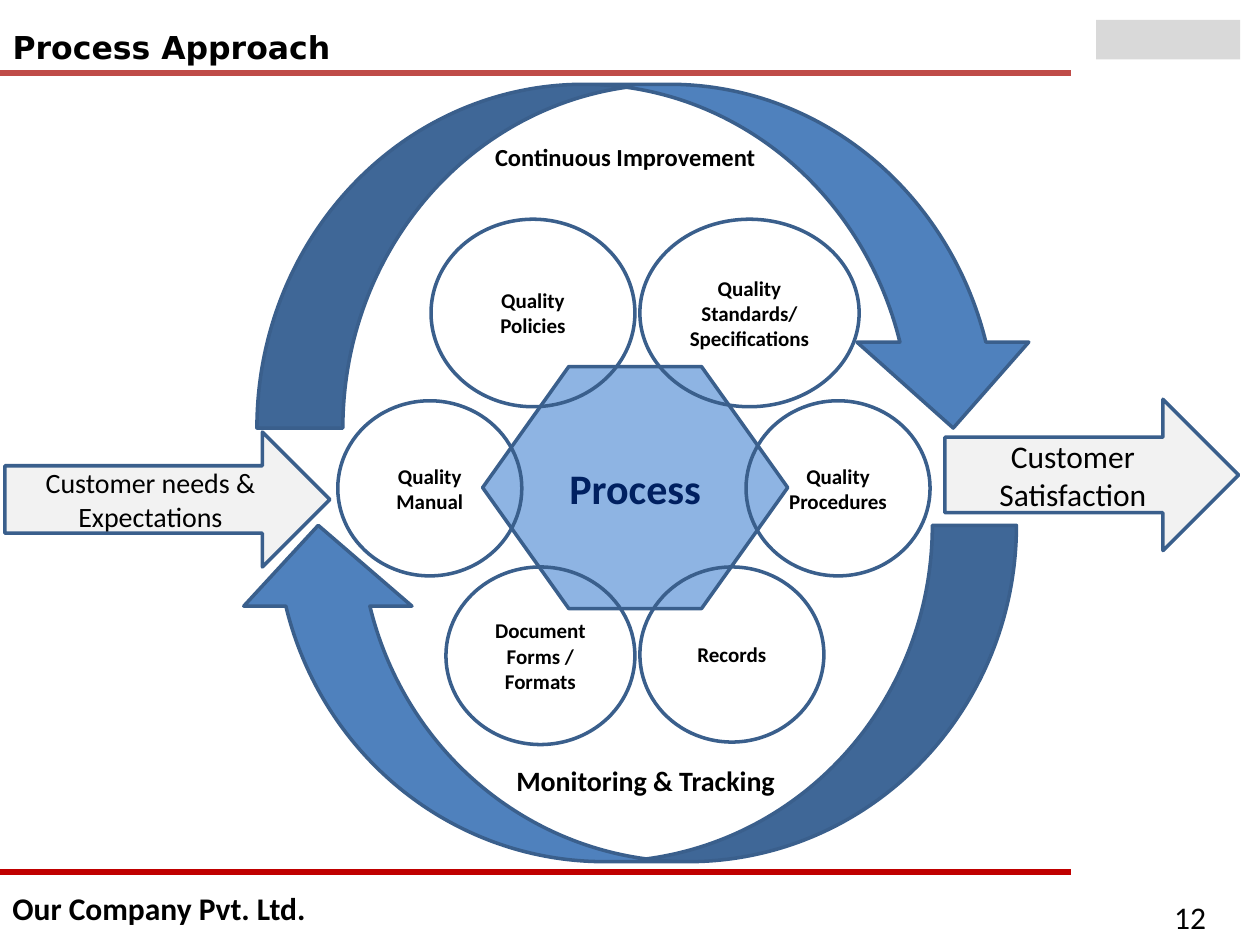
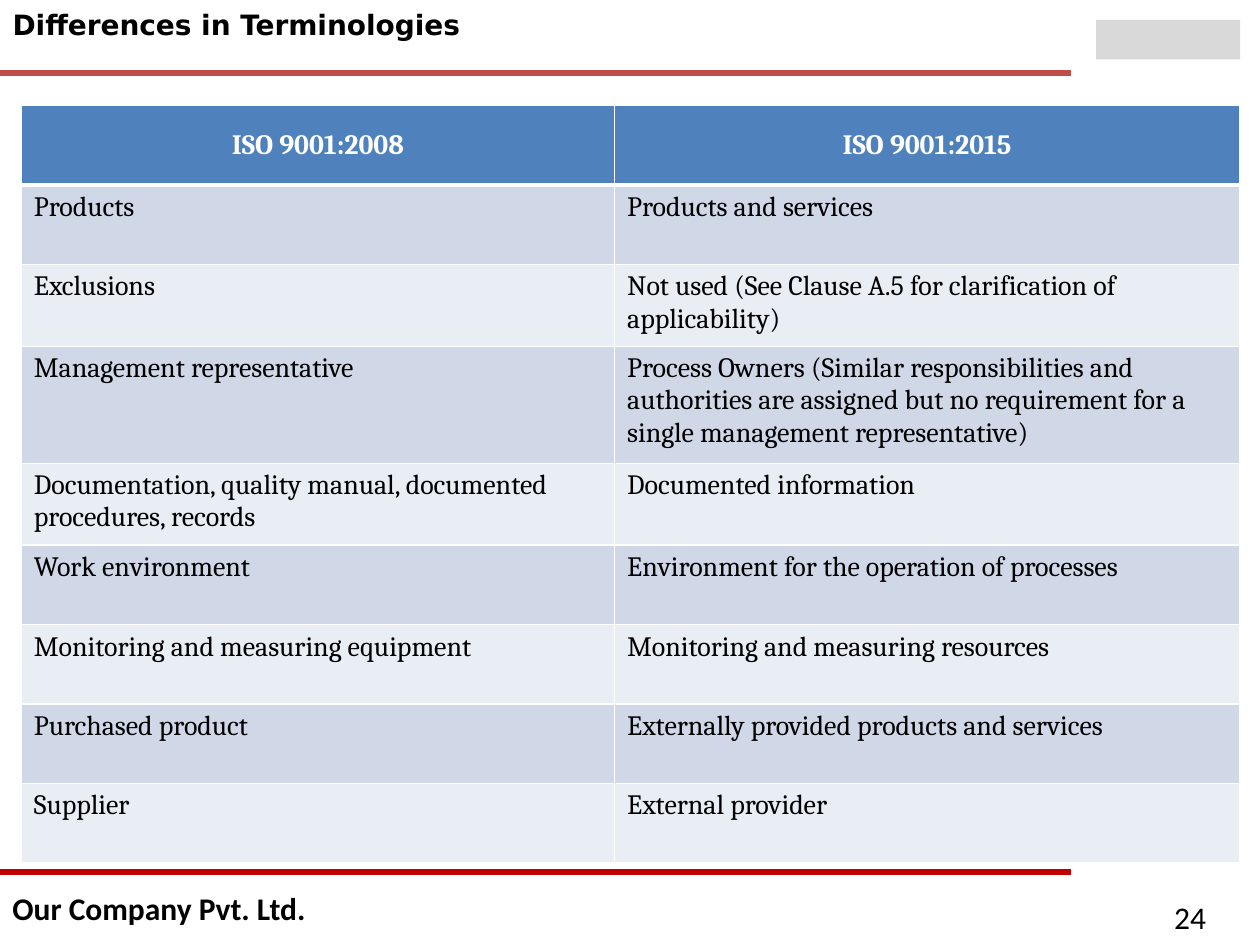
"""Build two quality management slides: a process diagram and a table of terms."""
from dataclasses import dataclass

from lxml.etree import SubElement
from pptx import Presentation
from pptx.dml.color import RGBColor
from pptx.enum.shapes import MSO_CONNECTOR as Link, MSO_SHAPE as Kind
from pptx.enum.text import MSO_ANCHOR as Anchor, MSO_AUTO_SIZE as Fit, PP_ALIGN as Align
from pptx.oxml.ns import qn
from pptx.util import Cm, Pt

BLACK = RGBColor(0x00, 0x00, 0x00)
WHITE = RGBColor(0xFF, 0xFF, 0xFF)
BLUE = RGBColor(0x4F, 0x81, 0xBD)
EDGE = RGBColor(0x3A, 0x5F, 0x8C)
SKY = RGBColor(0x8E, 0xB4, 0xE3)
NAVY = RGBColor(0x00, 0x20, 0x60)
PALE = RGBColor(0xF2, 0xF2, 0xF2)
GREY = RGBColor(0xD9, 0xD9, 0xD9)
BRICK = RGBColor(0xBF, 0x4C, 0x48)
RED = RGBColor(0xC0, 0x00, 0x00)
BANDS = (RGBColor(0xE9, 0xED, 0xF4), RGBColor(0xD0, 0xD8, 0xE8))


@dataclass(frozen=True)
class Box:
    left: float
    top: float
    width: float
    height: float

    def size(self) -> tuple:
        return Cm(self.left), Cm(self.top), Cm(self.width), Cm(self.height)


@dataclass(frozen=True)
class Type:
    size: int
    bold: bool = False
    color: RGBColor = BLACK
    face: str = "Calibri"
    align: Align = Align.LEFT


@dataclass(frozen=True)
class Node:
    kind: Kind
    box: Box
    text: str = ""
    type: Type = Type(12, True, align=Align.CENTER)
    fill: RGBColor | None = None
    adjust: tuple = ()
    turn: int = 0


HEAD = Type(16, True, WHITE, "Cambria", Align.CENTER)
BODY = Type(16, face="Cambria")

NODES = (
    Node(Kind.RIGHT_ARROW, Box(0.1, 8.71, 6.55, 2.72), "Customer needs & Expectations",
         Type(16, align=Align.CENTER), PALE),
    Node(Kind.RIGHT_ARROW, Box(19.05, 8.05, 5.92, 3.05), "Customer Satisfaction",
         Type(18, align=Align.CENTER), PALE),
    Node(Kind.HEXAGON, Box(9.73, 7.39, 6.15, 4.88), "Process",
         Type(24, True, NAVY, align=Align.CENTER), SKY, (0.356, 1.155)),
    Node(Kind.OVAL, Box(8.69, 4.42, 4.11, 3.78), "Quality Policies"),
    Node(Kind.OVAL, Box(12.9, 4.42, 4.42, 3.78), "Quality Standards/\nSpecifications"),
    Node(Kind.OVAL, Box(6.81, 8.08, 3.71, 3.53), "Quality Manual"),
    Node(Kind.OVAL, Box(8.99, 11.43, 3.81, 3.58), "Document\nForms / Formats"),
    Node(Kind.OVAL, Box(12.9, 11.43, 3.71, 3.53), "Records"),
    Node(Kind.OVAL, Box(15.04, 8.08, 3.71, 3.53), "Quality Procedures"),
    Node(Kind.CURVED_DOWN_ARROW, Box(5.18, 1.7, 15.77, 6.93), fill=BLUE),
    Node(Kind.CURVED_DOWN_ARROW, Box(4.72, 10.59, 15.77, 6.78), fill=BLUE,
         adjust=(0.25, 0.5, 0.24), turn=180),
)

TERMS = (
    ("ISO 9001:2008", "ISO 9001:2015"),
    ("Products", "Products and services"),
    ("Exclusions", "Not used (See Clause A.5 for clarification of applicability)"),
    ("Management representative",
     "Process Owners (Similar responsibilities and authorities are assigned "
     "but no requirement for a single management representative)"),
    ("Documentation, quality manual, documented procedures, records",
     "Documented information"),
    ("Work environment", "Environment for the operation of processes"),
    ("Monitoring and measuring equipment", "Monitoring and measuring resources"),
    ("Purchased product", "Externally provided products and services"),
    ("Supplier", "External provider"),
)
WIDTHS = (11.96, 12.6)
HEIGHTS = (1.6, 1.6, 1.65, 2.36, 1.65, 1.6, 1.6, 1.6, 1.6)


def write(frame, text: str, type: Type) -> None:
    frame.text = text
    frame.word_wrap = True
    for para in frame.paragraphs:
        para.alignment = type.align
        for font in (para.font, *(run.font for run in para.runs)):
            font.name = type.face
            font.size = Pt(type.size)
            font.bold = type.bold
            font.color.rgb = type.color


def add_label(slide, box: Box, text: str, type: Type, anchor: Anchor = Anchor.TOP) -> None:
    frame = slide.shapes.add_textbox(*box.size()).text_frame
    write(frame, text, type)
    frame.vertical_anchor = anchor


def add_rule(slide, top: float, color: RGBColor) -> None:
    rule = slide.shapes.add_connector(Link.STRAIGHT, Cm(0), Cm(top), Cm(21.59), Cm(top))
    rule.line.color.rgb = color
    rule.line.width = Pt(3)
    SubElement(rule._element.spPr, qn("a:effectLst"))


def add_node(slide, node: Node) -> None:
    shape = slide.shapes.add_shape(node.kind, *node.box.size())
    shape.shadow.inherit = False
    shape.rotation = node.turn
    for place, value in enumerate(node.adjust):
        shape.adjustments[place] = value
    if node.fill is None:
        shape.fill.background()
    else:
        shape.fill.solid()
        shape.fill.fore_color.rgb = node.fill
    shape.line.color.rgb = EDGE
    shape.line.width = Pt(2)
    if node.text:
        write(shape.text_frame, node.text, node.type)
        shape.text_frame.vertical_anchor = Anchor.MIDDLE


def add_page(deck, title: str, box: Box, size: int, number: int):
    slide = deck.slides.add_slide(deck.slide_layouts[5])
    head = slide.shapes.title
    head.left, head.top, head.width, head.height = box.size()
    write(head.text_frame, title, Type(size, True, face="DejaVu Sans"))
    head.text_frame.vertical_anchor = Anchor.TOP
    head.text_frame.auto_size = Fit.NONE
    add_rule(slide, 1.47, BRICK)
    add_rule(slide, 17.58, RED)
    badge = slide.shapes.add_shape(Kind.RECTANGLE, *Box(22.1, 0.4, 2.9, 0.8).size())
    badge.shadow.inherit = False
    badge.fill.solid()
    badge.fill.fore_color.rgb = GREY
    badge.line.fill.background()
    add_label(slide, Box(0, 17.98, 7.19, 0.64), "Our Company Pvt. Ltd.",
              Type(18, True), Anchor.MIDDLE)
    add_label(slide, Box(23.42, 17.98, 1.96, 1.02), str(number), Type(18))
    return slide


def set_edge(cell, side: str, width: int) -> None:
    edge = SubElement(cell._tc.get_or_add_tcPr(), qn(f"a:ln{side}"), w=str(Pt(width)))
    fill = SubElement(edge, qn("a:solidFill"))
    SubElement(fill, qn("a:srgbClr"), val=str(WHITE))


def add_terms(slide) -> None:
    box = Box(0.43, 2.13, sum(WIDTHS), sum(HEIGHTS))
    table = slide.shapes.add_table(len(TERMS), len(WIDTHS), *box.size()).table
    for col, width in zip(table.columns, WIDTHS):
        col.width = Cm(width)
    for row, (line, height) in enumerate(zip(TERMS, HEIGHTS)):
        table.rows[row].height = Cm(height)
        for col, text in enumerate(line):
            cell = table.cell(row, col)
            write(cell.text_frame, text, BODY if row else HEAD)
            cell.vertical_anchor = Anchor.TOP if row else Anchor.MIDDLE
            for side in "LRTB":
                set_edge(cell, side, 3 if (row, side) in ((0, "B"), (1, "T")) else 1)
            cell.fill.solid()
            cell.fill.fore_color.rgb = BANDS[row % 2] if row else BLUE


def main() -> None:
    deck = Presentation()
    deck.slide_width, deck.slide_height = Cm(25.4), Cm(19.05)

    cycle = add_page(deck, "Process Approach", Box(0, 0.43, 16.61, 1.02), 18, 12)
    for node in NODES:
        add_node(cycle, node)
    add_label(cycle, Box(9.73, 2.74, 5.92, 0.94), "Continuous Improvement", Type(14, True))
    add_label(cycle, Box(10.16, 15.27, 5.92, 0.94), "Monitoring & Tracking", Type(16, True))

    terms = add_page(deck, "Differences in Terminologies", Box(0, 0.03, 24.56, 0.94), 16, 24)
    add_terms(terms)
    deck.save("out.pptx")


if __name__ == "__main__":
    main()
